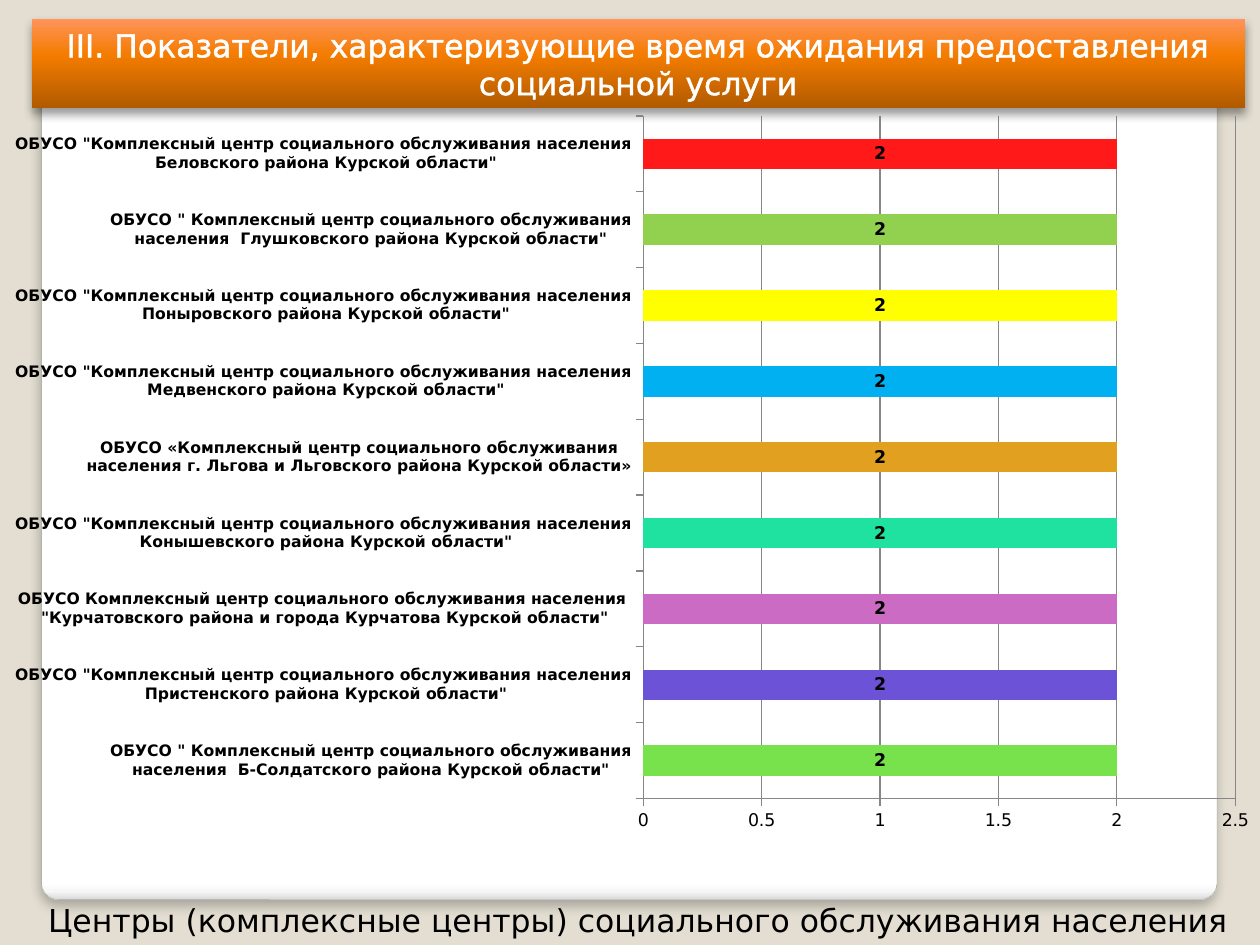
from lxml import etree
from pptx import Presentation
from pptx.chart.data import CategoryChartData
from pptx.dml.color import RGBColor
from pptx.enum import chart as ch, shapes, text
from pptx.oxml.ns import qn
from pptx.util import Inches, Pt

FONT = "DejaVu Sans"
BACKGROUND = RGBColor(0xE3, 0xDE, 0xD1)
WHITE = RGBColor(0xFF, 0xFF, 0xFF)
BLACK = RGBColor(0, 0, 0)
PANEL_LINE = RGBColor(0xA4, 0xA4, 0xA4)
GRID = RGBColor(0x86, 0x86, 0x86)
PANEL_STOPS = [(0, WHITE), (98, WHITE), (99, RGBColor(0xF7, 0xF7, 0xF7)),
               (100, RGBColor(0xDA, 0xDA, 0xDA))]
TITLE_STOPS = [(0, RGBColor(0xB0, 0x5A, 0x00)), (60, RGBColor(0xF4, 0x7C, 0x00)),
               (100, RGBColor(0xFF, 0x94, 0x5C))]

CENTRE = "Комплексный центр социального обслуживания населения"
# Centres from the bottom bar to the top one: label, bar colour, value
CENTRES = [
    (f'ОБУСО " {CENTRE}  Б-Солдатского района Курской области"', RGBColor(0x77, 0xE2, 0x4C), 2),
    (f'ОБУСО "{CENTRE}  Пристенского района Курской области"', RGBColor(0x6B, 0x52, 0xD6), 2),
    (f'ОБУСО {CENTRE}  "Курчатовского района и города Курчатова Курской области"',
     RGBColor(0xCB, 0x6B, 0xC4), 2),
    (f'ОБУСО "{CENTRE}  Конышевского района Курской области"', RGBColor(0x1F, 0xE1, 0xA0), 2),
    (f'ОБУСО «{CENTRE} г. Льгова и Льговского района Курской области»',
     RGBColor(0xE1, 0xA0, 0x1F), 2),
    (f'ОБУСО "{CENTRE}  Медвенского района Курской области"', RGBColor(0x00, 0xB0, 0xF0), 2),
    (f'ОБУСО "{CENTRE}  Поныровского района Курской области"', RGBColor(0xFF, 0xFF, 0x00), 2),
    (f'ОБУСО " {CENTRE}  Глушковского района Курской области"', RGBColor(0x92, 0xD0, 0x50), 2),
    (f'ОБУСО "{CENTRE}  Беловского района Курской области"', RGBColor(0xFF, 0x19, 0x19), 2),
]


def add_element(parent, tag, **attributes):
    values = {name: str(value) for name, value in attributes.items()}
    return etree.SubElement(parent, qn(tag), values)


def set_gradient(shape, stops, angle):
    gradient = add_element(shape._element.spPr, "a:gradFill", rotWithShape=1)
    stop_list = add_element(gradient, "a:gsLst")
    for position, color in stops:
        stop = add_element(stop_list, "a:gs", pos=position * 1000)
        add_element(stop, "a:srgbClr", val=color)
    add_element(gradient, "a:lin", ang=angle * 60000, scaled=0)


def set_shadow(shape, opacity, blur, distance):
    effects = add_element(shape._element.spPr, "a:effectLst")
    shadow = add_element(effects, "a:outerShdw", blurRad=Pt(blur), dist=Pt(distance),
                         dir=90 * 60000, algn="t", rotWithShape=0)
    color = add_element(shadow, "a:srgbClr", val=BLACK)
    add_element(color, "a:alpha", val=opacity * 1000)


def format_font(font, size, color=BLACK, bold=False):
    font.name, font.size, font.bold = FONT, Pt(size), bold
    font.color.rgb = color


def write_line(shape, words, color):
    frame = shape.text_frame
    frame.word_wrap = True
    frame.auto_size = text.MSO_AUTO_SIZE.NONE
    paragraph = frame.paragraphs[0]
    paragraph.alignment = text.PP_ALIGN.CENTER
    run = paragraph.add_run()
    run.text = words
    format_font(run.font, 18, color)
    return run


def add_panel(slide):
    panel = slide.shapes.add_shape(shapes.MSO_SHAPE.ROUNDED_RECTANGLE, Inches(0.33),
                                   Inches(0.36), Inches(9.33), Inches(6.78))
    panel.adjustments[0] = 0.02
    set_gradient(panel, PANEL_STOPS, 90)
    panel.line.color.rgb = PANEL_LINE
    panel.line.width = Pt(0.16)
    set_shadow(panel, 25, 6, 4)
    # The panel lies behind the title
    slide.shapes.title._element.addprevious(panel._element)


def format_title(slide):
    title = slide.shapes.title
    title.left, title.top = Inches(0.25), Inches(0.15)
    title.width, title.height = Inches(9.63), Inches(0.71)
    set_gradient(title, TITLE_STOPS, 270)
    set_shadow(title, 40, 5.2, 3)
    title.text_frame.vertical_anchor = text.MSO_ANCHOR.MIDDLE
    run = write_line(title, "III. Показатели, характеризующие время ожидания "
                            "предоставления социальной услуги", WHITE)
    # Thin outline round the letters
    outline = etree.Element(qn("a:ln"), w=str(Pt(1.45)))
    add_element(add_element(outline, "a:solidFill"), "a:srgbClr", val=WHITE)
    run.font._element.insert(0, outline)


def add_caption(slide):
    caption = slide.shapes.add_textbox(Inches(0.25), Inches(7.1), Inches(9.63), Inches(0.4))
    write_line(caption, "Центры (комплексные центры) социального обслуживания населения", BLACK)


def set_plot_area(chart, x, y, w, h):
    plot_area = chart._chartSpace.chart.plotArea
    for old in plot_area.findall(qn("c:layout")):
        plot_area.remove(old)
    layout = etree.Element(qn("c:layout"))
    manual = add_element(layout, "c:manualLayout")
    for tag, value in [("layoutTarget", "inner"), ("xMode", "edge"), ("yMode", "edge"),
                       ("x", x), ("y", y), ("w", w), ("h", h)]:
        add_element(manual, f"c:{tag}", val=value)
    plot_area.insert(0, layout)


def format_axis(axis, size, bold):
    axis.major_tick_mark = ch.XL_TICK_MARK.OUTSIDE
    axis.minor_tick_mark = ch.XL_TICK_MARK.NONE
    axis.format.line.color.rgb = GRID
    format_font(axis.tick_labels.font, size, bold=bold)


def add_waiting_chart(slide):
    labels, colors, values = zip(*CENTRES)
    data = CategoryChartData(number_format="General")
    data.categories = labels
    data.add_series("Series 1", values)
    chart = slide.shapes.add_chart(ch.XL_CHART_TYPE.BAR_STACKED, Inches(0.12), Inches(0.8),
                                   Inches(9.88), Inches(6.02), data).chart
    chart.has_title = chart.has_legend = False
    format_font(chart.font, 10)
    set_plot_area(chart, 0.5, 0.02, 0.48, 0.9)

    # Axes and grid
    format_axis(chart.category_axis, 9, True)
    value_axis = chart.value_axis
    format_axis(value_axis, 10, False)
    value_axis.minimum_scale, value_axis.maximum_scale = 0, 2.5
    value_axis.major_unit = 0.5
    value_axis.has_major_gridlines = True
    value_axis.major_gridlines.format.line.color.rgb = GRID

    # One colour for each centre, with its value in the bar
    plot = chart.plots[0]
    plot.gap_width, plot.overlap = 150, 100
    plot.vary_by_categories = False
    series = plot.series[0]
    for index, color in enumerate(colors):
        fill = series.points[index].format.fill
        fill.solid()
        fill.fore_color.rgb = color
    series.data_labels.show_value = True
    series.data_labels.position = ch.XL_LABEL_POSITION.CENTER
    format_font(series.data_labels.font, 10, bold=True)


def main():
    presentation = Presentation()
    presentation.slide_width, presentation.slide_height = Inches(10), Inches(7.5)
    slide = presentation.slides.add_slide(presentation.slide_layouts[5])
    slide.background.fill.solid()
    slide.background.fill.fore_color.rgb = BACKGROUND
    add_panel(slide)
    format_title(slide)
    add_caption(slide)
    add_waiting_chart(slide)
    presentation.save("out.pptx")


if __name__ == "__main__":
    main()
